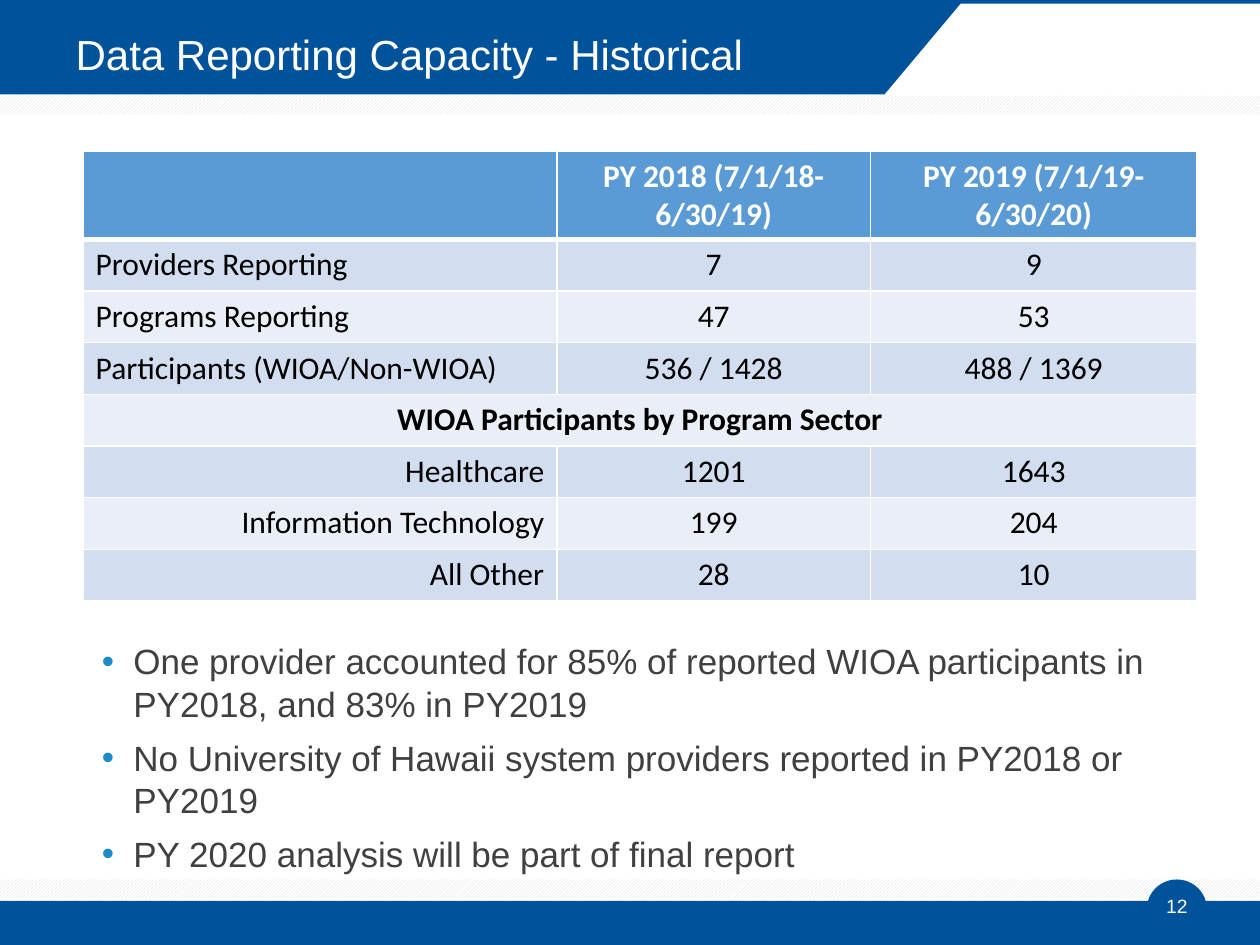
"""Build the slide on historical data reporting capacity."""
from dataclasses import dataclass
from typing import Optional

from lxml import etree
from pptx import Presentation
from pptx import util as u
from pptx.dml.color import RGBColor
from pptx.enum import dml, shapes, text
from pptx.oxml.ns import qn

Align = text.PP_ALIGN
Shape = shapes.MSO_SHAPE


@dataclass(frozen=True)
class Theme:
    navy: str = "00529B"
    hatch: str = "D9D9D9"
    white: str = "FFFFFF"
    black: str = "000000"
    grey: str = "404040"
    bullet: str = "188BCA"
    head: str = "5B9BD5"
    bands: tuple = ("D2DEEF", "EAEFF7")
    sans: str = "Arial"
    grid: str = "Calibri"
    title: int = 24
    body: int = 20
    cell: int = 18
    page: int = 11


@dataclass(frozen=True)
class Box:
    left: float
    top: float
    width: float
    height: float

    def emu(self) -> tuple:
        return tuple(map(u.Inches, (self.left, self.top, self.width, self.height)))


@dataclass(frozen=True)
class Part:
    box: Box
    kind: Shape = Shape.RECTANGLE
    hatched: bool = False


@dataclass(frozen=True)
class Row:
    label: str
    first: str = ""
    second: str = ""
    align: Optional[Align] = Align.LEFT
    bold: bool = False
    merged: bool = False


THEME = Theme()
PARTS = (
    Part(Box(0, 6.98, 10, 0.15), hatched=True),
    Part(Box(0, 7.15, 10, 0.35)),
    Part(Box(9.1, 6.98, 0.48, 0.48), Shape.OVAL),
    Part(Box(0, 0, 10, 0.03)),
    Part(Box(0, 0.76, 10, 0.15), hatched=True),
)
BANNER = ((0, 0.01), (7.64, 0.01), (7.02, 0.75), (0, 0.75))
ROWS = (
    Row("", "PY 2018 (7/1/18-6/30/19)", "PY 2019 (7/1/19-6/30/20)", bold=True),
    Row("Providers Reporting", "7", "9"),
    Row("Programs Reporting", "47", "53"),
    Row("Participants (WIOA/Non-WIOA)", "536 / 1428", "488 / 1369"),
    Row("WIOA Participants by Program Sector", align=Align.CENTER, bold=True, merged=True),
    Row("Healthcare", "1201", "1643", Align.RIGHT),
    Row("Information Technology", "199", "204", Align.RIGHT),
    Row("All Other", "28", "10", Align.RIGHT),
)
WIDTHS = (3.76, 2.49, 2.59)
NOTES = (
    "One provider accounted for 85% of reported WIOA participants in PY2018, and 83% in PY2019",
    "No University of Hawaii system providers reported in PY2018 or PY2019",
    "PY 2020 analysis will be part of final report",
)


def rgb(code: str) -> RGBColor:
    return RGBColor.from_string(code)


def style(para, size: int, face: str, code: str, bold: bool = False) -> None:
    font = para.font
    font.size, font.name, font.bold = u.Pt(size), face, bold
    font.color.rgb = rgb(code)


def paint(shape, hatched: bool = False) -> None:
    shape.shadow.inherit = False
    shape.line.fill.background()
    fill = shape.fill
    if hatched:
        fill.patterned()
        fill.pattern = dml.MSO_PATTERN.LIGHT_UPWARD_DIAGONAL
        fill.fore_color.rgb, fill.back_color.rgb = rgb(THEME.hatch), rgb(THEME.white)
    else:
        fill.solid()
        fill.fore_color.rgb = rgb(THEME.navy)


def draw_frame(slide) -> None:
    for part in PARTS:
        paint(slide.shapes.add_shape(part.kind, *part.box.emu()), part.hatched)
    start, *rest = [tuple(map(u.Inches, point)) for point in BANNER]
    pen = slide.shapes.build_freeform(*start)
    pen.add_line_segments(rest, close=True)
    paint(pen.convert_to_shape())


def draw_title(slide, words: str, box: Box) -> None:
    title = slide.shapes.title
    title.left, title.top, title.width, title.height = box.emu()
    tree = title._element.getparent()
    tree.append(title._element)
    frame = title.text_frame
    frame.text = words
    frame.vertical_anchor = text.MSO_ANCHOR.MIDDLE
    frame.margin_top = frame.margin_bottom = 0
    para = frame.paragraphs[0]
    para.alignment, para.line_spacing = Align.LEFT, 0.9
    style(para, THEME.title, THEME.sans, THEME.white)


def draw_page(slide, words: str, box: Box) -> None:
    frame = slide.shapes.add_textbox(*box.emu()).text_frame
    frame.word_wrap = True
    frame.vertical_anchor = text.MSO_ANCHOR.MIDDLE
    para = frame.paragraphs[0]
    para.text, para.alignment = words, Align.CENTER
    style(para, THEME.page, THEME.sans, THEME.white)


def add_mark(para) -> None:
    props = para._p.get_or_add_pPr()
    props.set("marL", str(u.Inches(0.5)))
    props.set("indent", str(u.Inches(-0.25)))
    tint = etree.SubElement(props, qn("a:buClr"))
    etree.SubElement(tint, qn("a:srgbClr"), val=THEME.bullet)
    etree.SubElement(props, qn("a:buFont"), typeface=THEME.sans)
    etree.SubElement(props, qn("a:buChar"), char="•")


def draw_notes(slide, box: Box) -> None:
    frame = slide.shapes.add_textbox(*box.emu()).text_frame
    frame.word_wrap = True
    for i, note in enumerate(NOTES):
        para = frame.add_paragraph() if i else frame.paragraphs[0]
        para.text = note
        para.line_spacing, para.space_after = u.Pt(24), u.Pt(2)
        para.space_before = u.Pt(5 if i else 0)
        add_mark(para)
        style(para, THEME.body, THEME.sans, THEME.grey)


def add_edges(cell, top: int, low: int) -> None:
    props = cell._tc.get_or_add_tcPr()
    for side, width in (("L", 1), ("R", 1), ("T", top), ("B", low)):
        edge = etree.SubElement(props, qn(f"a:ln{side}"), w=str(u.Pt(width)))
        fill = etree.SubElement(edge, qn("a:solidFill"))
        etree.SubElement(fill, qn("a:srgbClr"), val=THEME.white)


def draw_table(slide, box: Box) -> None:
    table = slide.shapes.add_table(len(ROWS), len(WIDTHS), *box.emu()).table
    for col, width in zip(table.columns, WIDTHS):
        col.width = u.Inches(width)
    for r, row in enumerate(ROWS):
        table.rows[r].height = u.Inches(0.41 if r else 0.7)
        shade = THEME.bands[(r - 1) % 2] if r else THEME.head
        ink = THEME.black if r else THEME.white
        for c, words in enumerate((row.label, row.first, row.second)):
            cell = table.cell(r, c)
            add_edges(cell, 3 if r == 1 else 1, 1 if r else 3)
            cell.fill.solid()
            cell.fill.fore_color.rgb = rgb(shade)
            para = cell.text_frame.paragraphs[0]
            para.text, para.alignment = words, Align.CENTER if c else row.align
            style(para, THEME.cell, THEME.grid, ink, row.bold)
        if row.merged:
            table.cell(r, 0).merge(table.cell(r, len(WIDTHS) - 1))


def main() -> None:
    deck = Presentation()
    deck.slide_width, deck.slide_height = u.Inches(10), u.Inches(7.5)
    slide = deck.slides.add_slide(deck.slide_layouts[5])
    draw_frame(slide)
    draw_title(slide, "Data Reporting Capacity - Historical", Box(0.5, 0.09, 6.5, 0.72))
    draw_page(slide, "12", Box(9.1, 6.99, 0.48, 0.4))
    draw_notes(slide, Box(0.46, 5.03, 8.92, 2.38))
    draw_table(slide, Box(0.66, 1.2, 8.84, 3.54))
    deck.save("out.pptx")


if __name__ == "__main__":
    main()
